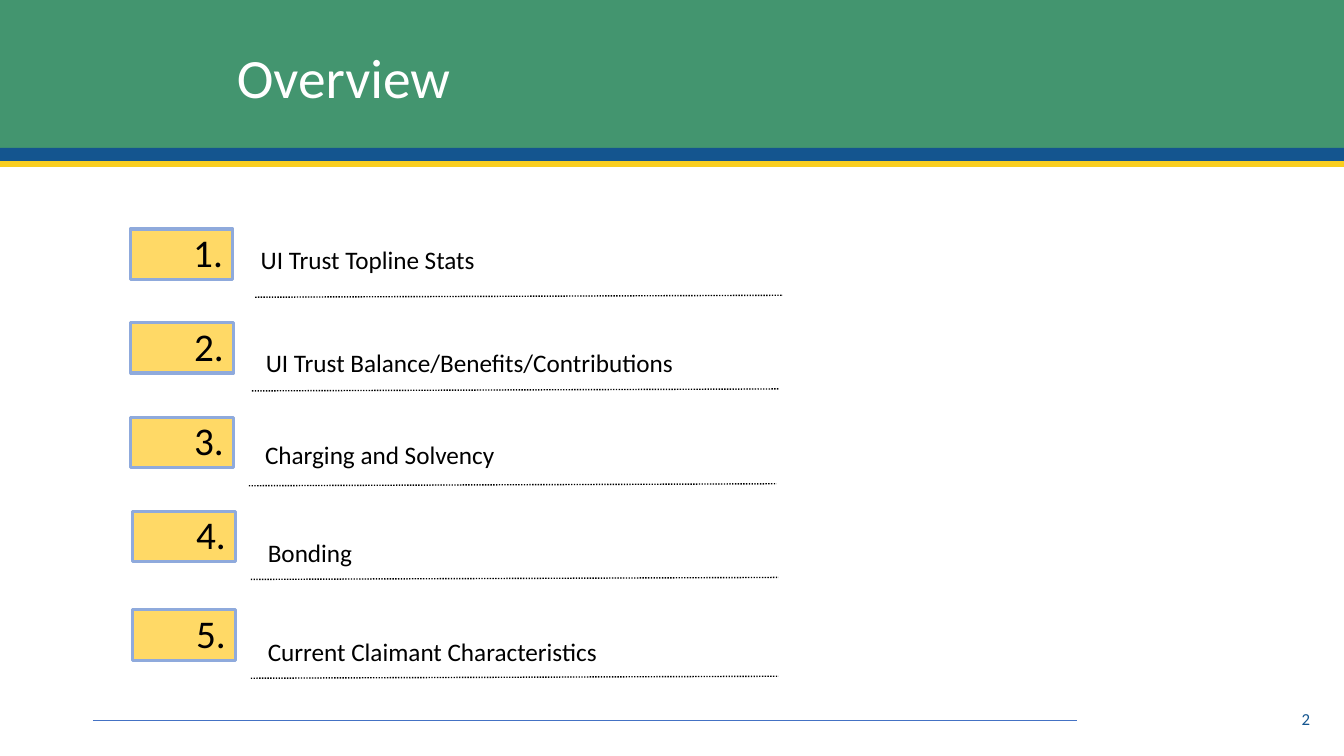
from pptx import Presentation
from pptx.dml.color import RGBColor
from pptx.enum.dml import MSO_LINE_DASH_STYLE as Dash
from pptx.enum.shapes import MSO_CONNECTOR as Connector, MSO_SHAPE as Shape
from pptx.enum.text import MSO_ANCHOR as Anchor, PP_ALIGN as Align
from pptx.oxml.ns import qn
from pptx.util import Cm, Pt

COLORS = {
    "green": "43956F",
    "blue": "14558F",
    "yellow": "F9CE20",
    "footer": "4472C4",
    "badge": "FFD966",
    "badge_edge": "8FAADC",
    "black": "000000",
    "white": "FFFFFF",
}


def write(shape, text, size, color="black", align=Align.LEFT,
          anchor=Anchor.TOP, spacing=1.0):
    frame = shape.text_frame
    frame.word_wrap = True
    frame.vertical_anchor = anchor
    paragraph = frame.paragraphs[0]
    paragraph.alignment = align
    paragraph.line_spacing = spacing
    run = paragraph.add_run()
    run.text = text
    run.font.name = "Calibri"
    run.font.size = Pt(size)
    run.font.color.rgb = RGBColor.from_string(COLORS[color])


def draw_line(x1, y1, x2, y2, color):
    """Add a 1 pt line without shadow, with ends given in centimetres."""
    line = slide.shapes.add_connector(
        Connector.STRAIGHT, Cm(x1), Cm(y1), Cm(x2), Cm(y2))
    line.line.color.rgb = RGBColor.from_string(COLORS[color])
    line.line.width = Pt(1)
    properties = line._element.spPr
    properties.append(properties.makeelement(qn("a:effectLst"), {}))
    return line


prs = Presentation()
prs.slide_width, prs.slide_height = Cm(33.87), Cm(19.05)
slide = prs.slides.add_slide(prs.slide_layouts[6])

# Header bands, stacked from the top edge
band_top = 0
for color, height in [("green", 3.73), ("blue", 0.33), ("yellow", 0.15)]:
    band = slide.shapes.add_shape(
        Shape.RECTANGLE, 0, Cm(band_top), prs.slide_width, Cm(height))
    band.shadow.inherit = False
    band.fill.solid()
    band.fill.fore_color.rgb = RGBColor.from_string(COLORS[color])
    band.line.fill.background()
    band_top += height

title = slide.shapes.add_textbox(Cm(5.72), Cm(1.27), Cm(25.32), Cm(1.5))
write(title, "Overview", 39.6, "white", anchor=Anchor.MIDDLE, spacing=0.9)

# Footer
draw_line(2.34, 18.16, 27.15, 18.16, "footer")
page_number = slide.shapes.add_textbox(Cm(25.65), Cm(17.6), Cm(7.62), Cm(1.02))
write(page_number, "2", 12, "blue", Align.RIGHT, Anchor.MIDDLE)

# Agenda: topic, badge left and top, topic left and top, rule left
agenda = [
    ("UI Trust Topline Stats", 3.28, 5.77, 6.32, 6.02, 6.43),
    ("UI Trust Balance/Benefits/Contributions", 3.3, 8.13, 6.45, 8.64, 6.35),
    ("Charging and Solvency", 3.3, 10.52, 6.43, 10.95, 6.27),
    ("Bonding", 3.35, 12.88, 6.5, 13.41, 6.32),
    ("Current Claimant Characteristics", 3.35, 15.37, 6.5, 15.9, 6.32),
]
for number, item in enumerate(agenda, start=1):
    topic, badge_left, badge_top, topic_left, topic_top, rule_left = item

    badge = slide.shapes.add_shape(
        Shape.RECTANGLE, Cm(badge_left), Cm(badge_top), Cm(2.59), Cm(1.27))
    badge.shadow.inherit = False
    badge.fill.solid()
    badge.fill.fore_color.rgb = RGBColor.from_string(COLORS["badge"])
    badge.line.color.rgb = RGBColor.from_string(COLORS["badge_edge"])
    badge.line.width = Pt(2.25)
    badge.text_frame.margin_bottom = Cm(0.25)
    write(badge, f"{number}.", 28, align=Align.RIGHT, anchor=Anchor.MIDDLE)

    topic_box = slide.shapes.add_textbox(
        Cm(topic_left), Cm(topic_top), Cm(14.35), Cm(1.02))
    write(topic_box, topic, 18)

    rule_top = badge_top + 1.67
    rule = draw_line(rule_left, rule_top + 0.05, rule_left + 13.3, rule_top, "black")
    # ROUND_DOT is the preset stored as sysDot
    rule.line.dash_style = Dash.ROUND_DOT

prs.save("out.pptx")
